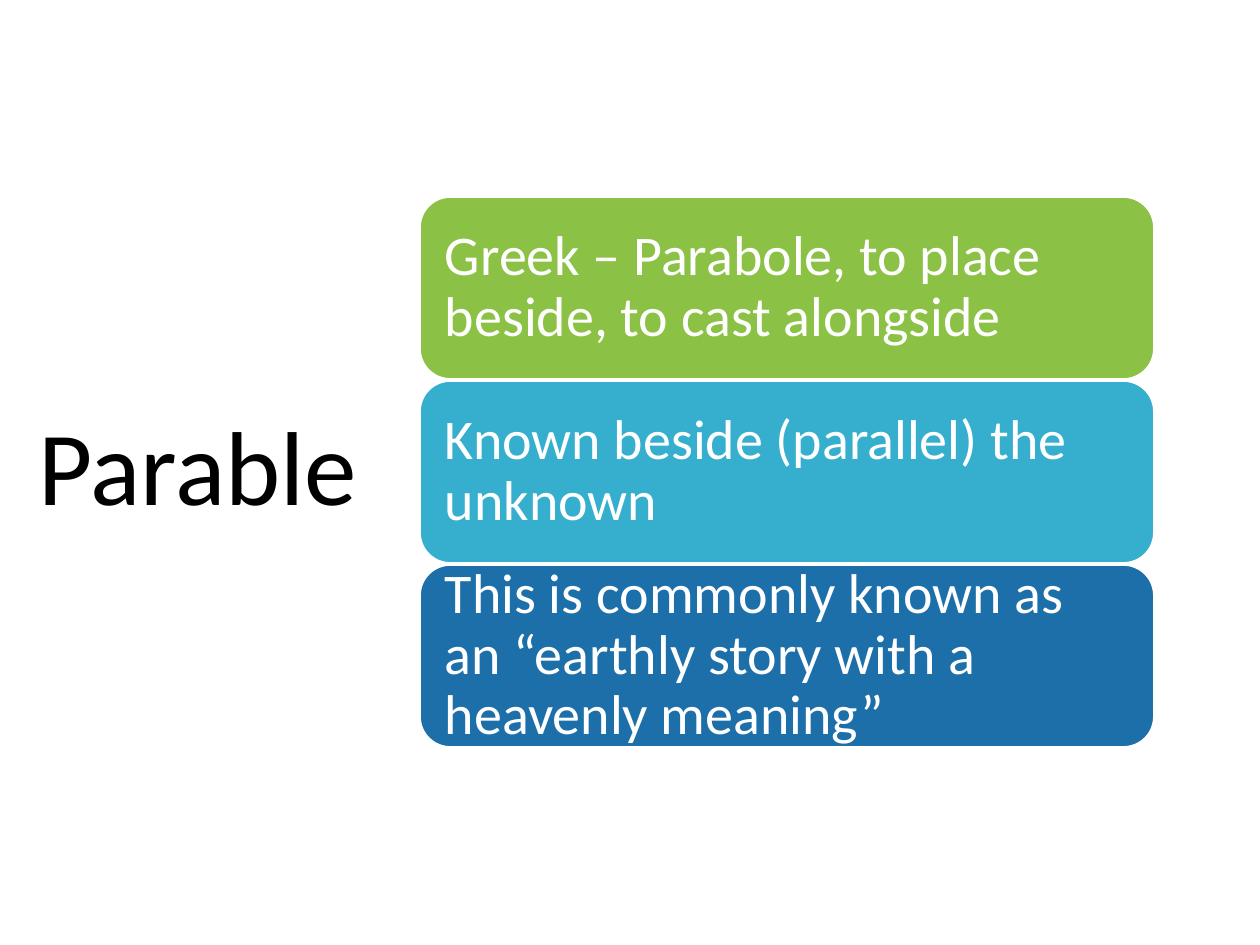
from dataclasses import dataclass

from pptx import Presentation
from pptx.dml.color import RGBColor
from pptx.enum.shapes import MSO_SHAPE
from pptx.enum.text import MSO_ANCHOR, MSO_AUTO_SIZE, PP_ALIGN
from pptx.util import Pt

SCALE = 914400 // 126


@dataclass(frozen=True)
class Theme:
    """Colours, font and type sizes of the slide."""
    font: str = "Calibri"
    ink: str = "000000"
    paper: str = "FFFFFF"
    cards: tuple = ("8BC145", "36AFCE", "1D6FA9")
    head: int = 60
    body: int = 32


class Deck:
    """Holds the theme and the current slide."""

    def __init__(self, theme):
        """Start a deck with one title-only slide."""
        self.theme = theme
        self.prs = Presentation()
        self.prs.slide_width, self.prs.slide_height = self.emu(1260, 945)
        self.slide = self.prs.slides.add_slide(self.prs.slide_layouts[5])

    def emu(self, *px):
        """Turn px lengths into EMU."""
        return [n * SCALE for n in px]

    def label(self, shape, text, size, color):
        """Set left-aligned, vertically centred text in a shape."""
        frame = shape.text_frame
        frame.text = text
        frame.word_wrap = True
        frame.auto_size = MSO_AUTO_SIZE.NONE
        frame.vertical_anchor = MSO_ANCHOR.MIDDLE
        para = frame.paragraphs[0]
        para.alignment = PP_ALIGN.LEFT
        para.line_spacing = 0.9
        para.font.name = self.theme.font
        para.font.size = Pt(size)
        para.font.color.rgb = RGBColor.from_string(color)
        return frame

    def title(self, text, *box):
        """Place and format the slide title."""
        shape = self.slide.shapes.title
        shape.left, shape.top, shape.width, shape.height = self.emu(*box)
        self.label(shape, text, self.theme.head, self.theme.ink)

    def card(self, text, fill, *box):
        """Add a rounded card with its text."""
        shape = self.slide.shapes.add_shape(
            MSO_SHAPE.ROUNDED_RECTANGLE, *self.emu(*box))
        shape.shadow.inherit = False
        shape.fill.solid()
        shape.fill.fore_color.rgb = RGBColor.from_string(fill)
        shape.line.color.rgb = RGBColor.from_string(self.theme.paper)
        shape.line.width = Pt(1)
        frame = self.label(shape, text, self.theme.body, self.theme.paper)
        pad, = self.emu(16)
        frame.margin_left = frame.margin_right = pad
        frame.margin_top = frame.margin_bottom = pad

    def stack(self, texts, left, top, width, height, step):
        """Add one card per text, evenly spaced downwards."""
        for i, (text, fill) in enumerate(zip(texts, self.theme.cards)):
            self.card(text, fill, left, top + i * step, width, height)


def main():
    """Build and save the slide."""
    deck = Deck(Theme())
    deck.title("Parable", 26, 234, 363, 475)
    deck.stack([
        "Greek – Parabole, to place beside, to cast alongside",
        "Known beside (parallel) the unknown",
        "This is commonly known as an “earthly story with a heavenly meaning”",
    ], 420, 197, 734, 182, 184)
    deck.prs.save("out.pptx")


if __name__ == "__main__":
    main()
